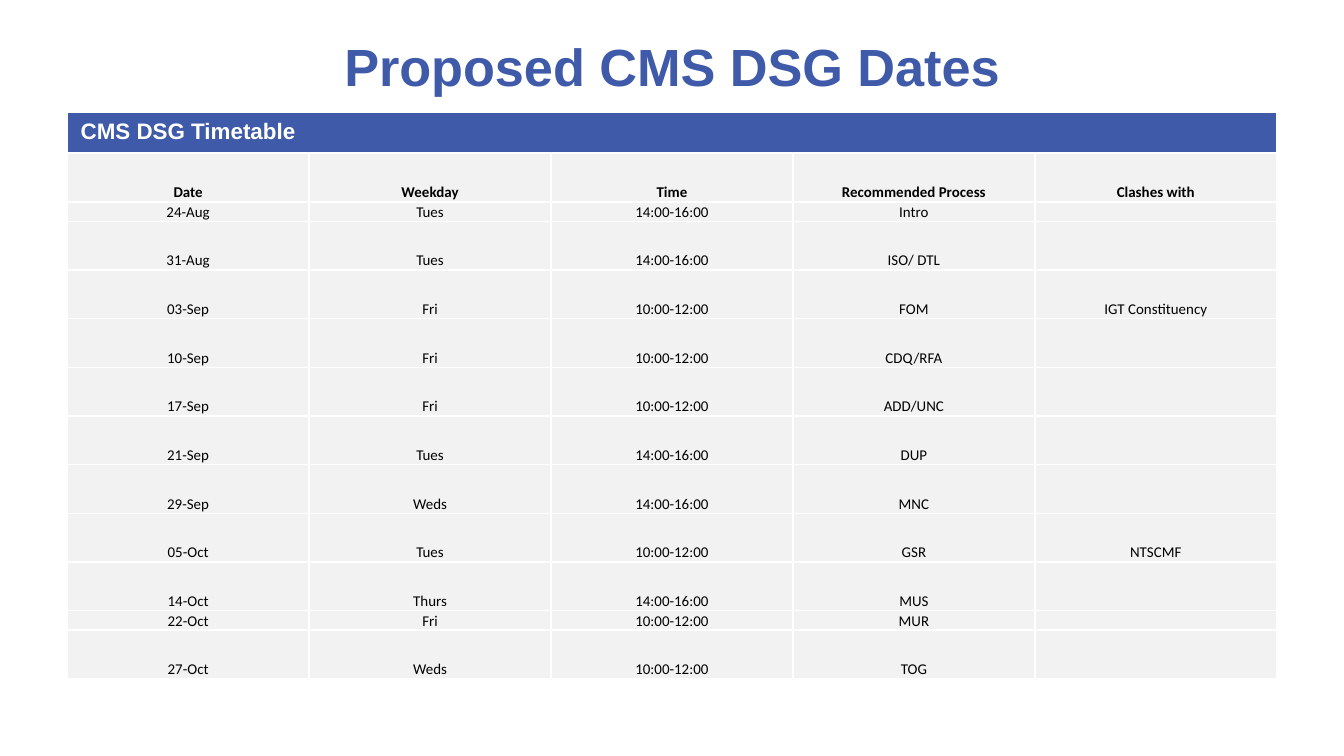
from lxml.etree import SubElement
from pptx import Presentation
from pptx.dml.color import RGBColor
from pptx.enum.text import MSO_ANCHOR as ANCHOR, PP_ALIGN as ALIGN
from pptx.oxml.ns import qn
from pptx.util import Cm, Pt

BLUE, GREY, WHITE, BLACK = "3E5AA8", "F2F2F2", "FFFFFF", "000000"
TITLE_ROW, TALL_ROW, SHORT_ROW = 0.74, 0.92, 0.37
HEADINGS = ("Date", "Weekday", "Time", "Recommended Process", "Clashes with")
MORNING, AFTERNOON = "10:00-12:00", "14:00-16:00"
SESSIONS = [
    ("24-Aug", "Tues", AFTERNOON, "Intro", ""),
    ("31-Aug", "Tues", AFTERNOON, "ISO/ DTL", ""),
    ("03-Sep", "Fri", MORNING, "FOM", "IGT Constituency"),
    ("10-Sep", "Fri", MORNING, "CDQ/RFA", ""),
    ("17-Sep", "Fri", MORNING, "ADD/UNC", ""),
    ("21-Sep", "Tues", AFTERNOON, "DUP", ""),
    ("29-Sep", "Weds", AFTERNOON, "MNC", ""),
    ("05-Oct", "Tues", MORNING, "GSR", "NTSCMF"),
    ("14-Oct", "Thurs", AFTERNOON, "MUS", ""),
    ("22-Oct", "Fri", MORNING, "MUR", ""),
    ("27-Oct", "Weds", MORNING, "TOG", ""),
]
SHORT_DATES = {"24-Aug", "22-Oct"}


def rgb(color):
    return RGBColor.from_string(color)


def write(tf, text, name, size, color, bold, align):
    p = tf.paragraphs[0]
    p.text = text
    p.alignment = align
    p.font.name, p.font.size, p.font.bold = name, Pt(size), bold
    p.font.color.rgb = rgb(color)
    if not text:
        SubElement(p._p, qn("a:endParaRPr"), sz=str(size * 100))


def paint(cell, color):
    tcPr = cell._tc.get_or_add_tcPr()
    for side in ("lnL", "lnR", "lnT", "lnB"):
        ln = SubElement(tcPr, qn(f"a:{side}"), w=str(Pt(1)))
        fill = SubElement(ln, qn("a:solidFill"))
        SubElement(fill, qn("a:srgbClr"), val=WHITE)
    cell.fill.solid()
    cell.fill.fore_color.rgb = rgb(color)


def add_title(s, left, top, width, height):
    sp = s.shapes.add_textbox(Cm(left), Cm(top), Cm(width), Cm(height))
    tf = sp.text_frame
    tf.word_wrap = True
    tf.vertical_anchor = ANCHOR.MIDDLE
    write(tf, "Proposed CMS DSG Dates", "Arial", 28, BLUE, True, ALIGN.CENTER)


def add_timetable(s, left, top, width):
    rows = [HEADINGS] + SESSIONS
    heights = [TITLE_ROW] + [SHORT_ROW if row[0] in SHORT_DATES else TALL_ROW for row in rows]
    table = s.shapes.add_table(len(heights), len(HEADINGS), Cm(left), Cm(top),
                               Cm(width), Cm(sum(heights))).table
    for row, height in zip(table.rows, heights):
        row.height = Cm(height)
    for column in table.columns:
        column.width = Cm(width / len(HEADINGS))

    for cell in table.rows[0].cells:
        paint(cell, BLUE)
    banner = table.cell(0, 0)
    banner.merge(table.cell(0, len(HEADINGS) - 1))
    write(banner.text_frame, "CMS DSG Timetable", "Arial", 12, WHITE, True, ALIGN.LEFT)

    for i, row in enumerate(rows, 1):
        for j, text in enumerate(row):
            cell = table.cell(i, j)
            cell.margin_left = cell.margin_right = cell.margin_top = Cm(0.02)
            cell.margin_bottom = 0
            cell.vertical_anchor = ANCHOR.BOTTOM
            paint(cell, GREY)
            write(cell.text_frame, text, "Calibri", 8, BLACK, row is HEADINGS, ALIGN.CENTER)


def main():
    prs = Presentation()
    prs.slide_width, prs.slide_height = Cm(25.4), Cm(14.29)
    s = prs.slides.add_slide(prs.slide_layouts[6])
    add_title(s, 1.27, 0.36, 22.86, 1.78)
    add_timetable(s, 1.27, 2.13, 22.86)
    prs.save("out.pptx")


if __name__ == "__main__":
    main()
